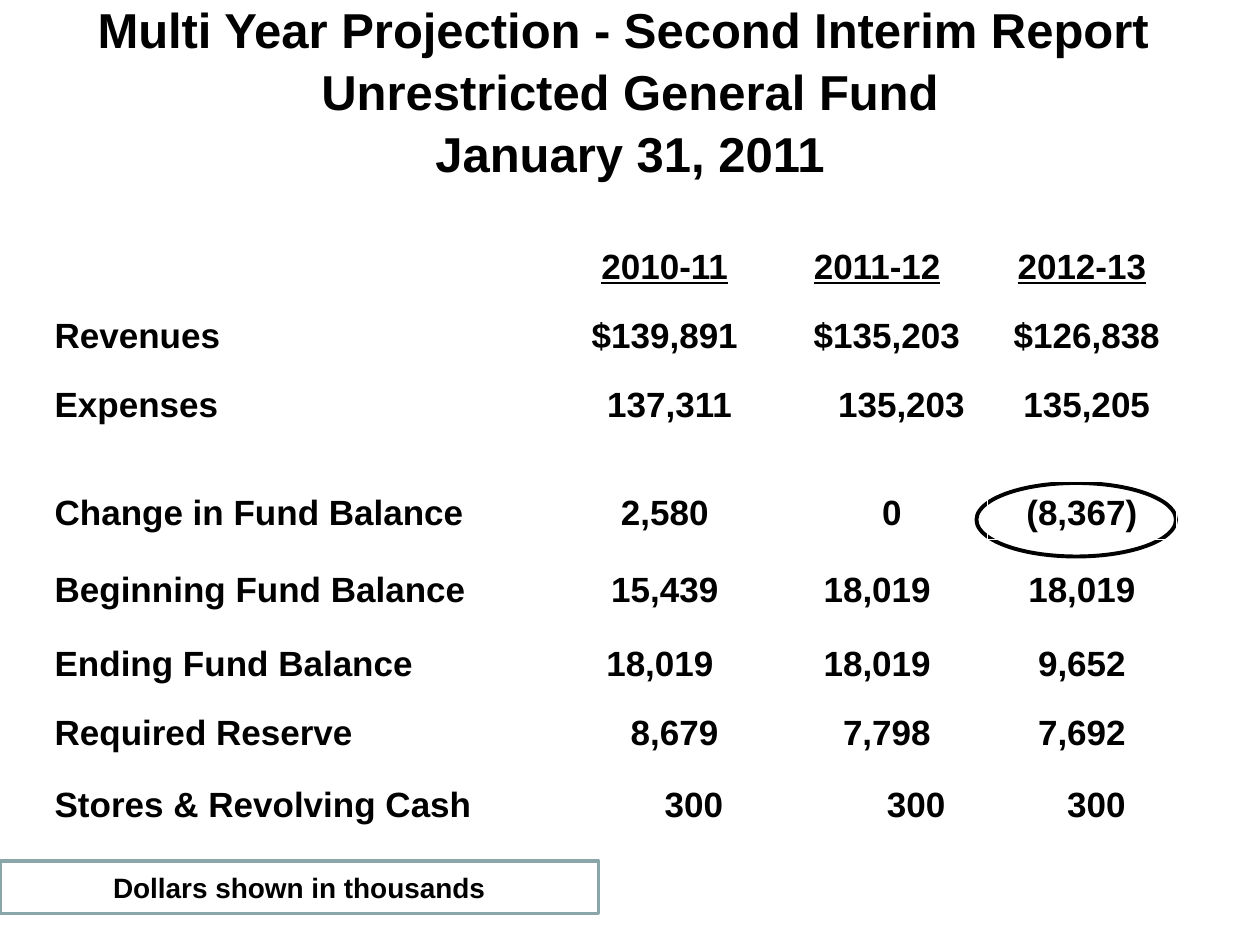
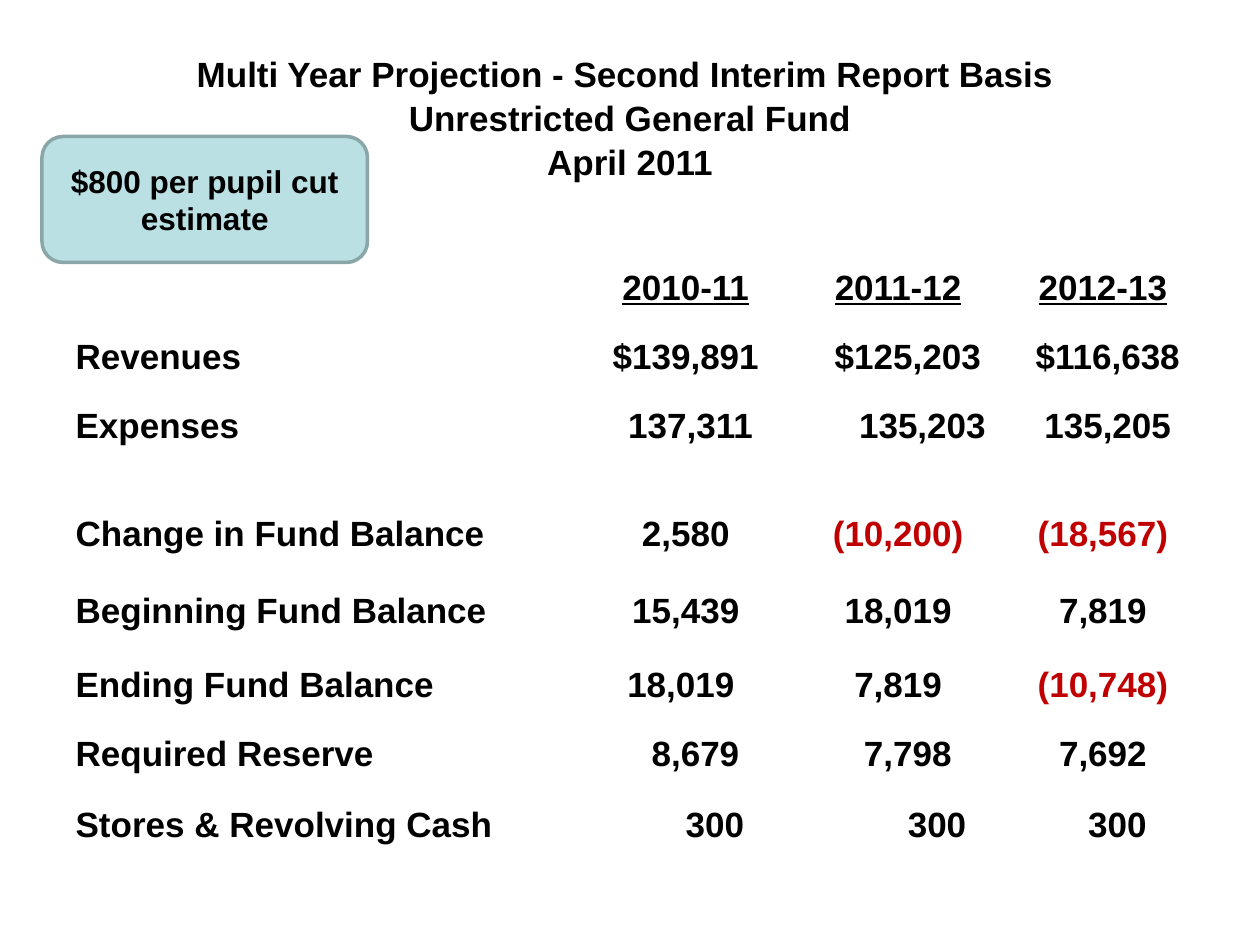
"""Build two slides that show multi-year projections of a general fund."""
from pptx import Presentation
from pptx.dml.color import RGBColor as Rgb
from pptx.enum.shapes import MSO_SHAPE as Kind
from pptx.enum.text import MSO_ANCHOR as Anchor, PP_ALIGN as Align
from pptx.util import Pt

HUES = {"ink": "000000", "paper": "FFFFFF", "edge": "8AA6A8", "pale": "BBE0E3", "loss": "C00000"}
FONT = "Arial"
WIDTHS = [297.5, 116.75, 126, 108]
HEIGHTS = [53.25, 39.5, 39.5, 29, 33, 44, 42, 39.5, 41, 37.5]
PAD = 7.2
SPACE = 5.56
HEAD = ["", "2010-11", "2011-12", "2012-13"]
SPENT = ["Expenses", "137,311", "135,203", "135,205"]
LAST = [
    ["Required Reserve", "8,679", "7,798", "7,692"],
    ["Stores & Revolving Cash", "300", "300", "300"],
]
SHIFTS = {
    (1, 2): 2, (1, 3): 1,
    (2, 1): 1, (2, 2): 5, (2, 3): 1,
    (6, 1): -1,
    (7, 1): 2, (7, 2): 2,
    (8, 1): 6, (8, 2): 8, (8, 3): 3,
}
WINTER = [
    HEAD,
    ["Revenues", "$139,891", "$135,203", "$126,838"],
    SPENT,
    [],
    ["Change in Fund Balance", "2,580", "0", "(8,367)"],
    ["Beginning Fund Balance", "15,439", "18,019", "18,019"],
    ["Ending Fund Balance", "18,019", "18,019", "9,652"],
    *LAST,
]
SPRING = [
    HEAD,
    ["Revenues", "$139,891", "$125,203", "$116,638"],
    SPENT,
    [],
    ["Change in Fund Balance", "2,580", "(10,200)", "(18,567)"],
    ["Beginning Fund Balance", "15,439", "18,019", "7,819"],
    ["Ending Fund Balance", "18,019", "7,819", "(10,748)"],
    *LAST,
]


def hue(name):
    """Return the named colour."""
    return Rgb.from_string(HUES[name])


def write(frame, text, size=20, color="ink", align=Align.CENTER, under=False, lead=None):
    """Put formatted bold text into a text frame."""
    par = frame.paragraphs[0]
    par.text = text
    par.alignment = align
    par.line_spacing = lead
    for run in par.runs:
        font = run.font
        font.name, font.size, font.bold = FONT, Pt(size), True
        font.underline = under
        font.color.rgb = hue(color)


class Deck:
    """Hold the style and the current slide."""

    def __init__(self):
        """Start an empty deck."""
        self.show = Presentation()
        self.show.slide_width, self.show.slide_height = Pt(720), Pt(540)
        self.slide = None

    def page(self):
        """Add a blank slide."""
        self.slide = self.show.slides.add_slide(self.show.slide_layouts[6])

    def title(self, text, top, high, size):
        """Add the centred title."""
        frame = self.slide.shapes.add_textbox(Pt(36), Pt(top), Pt(648), Pt(high)).text_frame
        frame.word_wrap = True
        frame.vertical_anchor = Anchor.MIDDLE
        write(frame, text, size=size, lead=1.05)

    def shape(self, kind, box, fill=None, line="edge", weight=2, text="", size=16):
        """Add an outlined shape with optional fill and text."""
        item = self.slide.shapes.add_shape(kind, *map(Pt, box))
        item.shadow.inherit = False
        if fill:
            item.fill.solid()
            item.fill.fore_color.rgb = hue(fill)
        else:
            item.fill.background()
        item.line.color.rgb = hue(line)
        item.line.width = Pt(weight)
        if text:
            item.text_frame.word_wrap = True
            item.text_frame.vertical_anchor = Anchor.MIDDLE
            write(item.text_frame, text, size=size)

    def table(self, left, top, rows, shifts, losses=False):
        """Add the fund table, nudging figures by side margins."""
        grid = self.slide.shapes.add_table(
            len(HEIGHTS), len(WIDTHS), Pt(left), Pt(top), Pt(sum(WIDTHS)), Pt(sum(HEIGHTS))
        ).table
        grid.first_row = grid.horz_banding = False
        for col, wide in zip(grid.columns, WIDTHS):
            col.width = Pt(wide)
        for row, high in zip(grid.rows, HEIGHTS):
            row.height = Pt(high)
        for cell in grid.iter_cells():
            cell.fill.background()
            cell.vertical_anchor = Anchor.BOTTOM
        for r, row in enumerate(rows):
            for c, text in enumerate(row):
                if not text:
                    continue
                cell = grid.cell(r, c)
                shift = shifts.get((r, c), 0) * SPACE
                cell.margin_left = Pt(PAD + max(shift, 0))
                cell.margin_right = Pt(PAD + max(-shift, 0))
                write(
                    cell.text_frame,
                    text,
                    color="loss" if losses and text.startswith("(") else "ink",
                    align=Align.CENTER if c else Align.LEFT,
                    under=r == 0,
                )


def main():
    """Build and save both slides."""
    deck = Deck()

    deck.page()
    deck.title(
        "Multi Year Projection - Second Interim Report \nUnrestricted General Fund\nJanuary 31, 2011",
        0, 102, 28,
    )
    deck.shape(Kind.OVAL, (558, 276, 114, 42), line="ink", weight=2.25)
    deck.table(24, 114, WINTER, {**SHIFTS, (4, 2): 3})
    deck.shape(Kind.RECTANGLE, (0, 492, 342, 30), fill="paper", text="Dollars shown in thousands")

    deck.page()
    deck.title(
        "Multi Year Projection - Second Interim Report Basis \nUnrestricted General Fund\nApril 2011",
        21.6, 90, 20,
    )
    deck.table(36, 126, SPRING, SHIFTS, losses=True)
    deck.shape(
        Kind.ROUNDED_RECTANGLE, (24, 78, 186, 72),
        fill="pale", text="$800 per pupil cut estimate", size=18,
    )

    deck.show.save("out.pptx")


if __name__ == "__main__":
    main()
